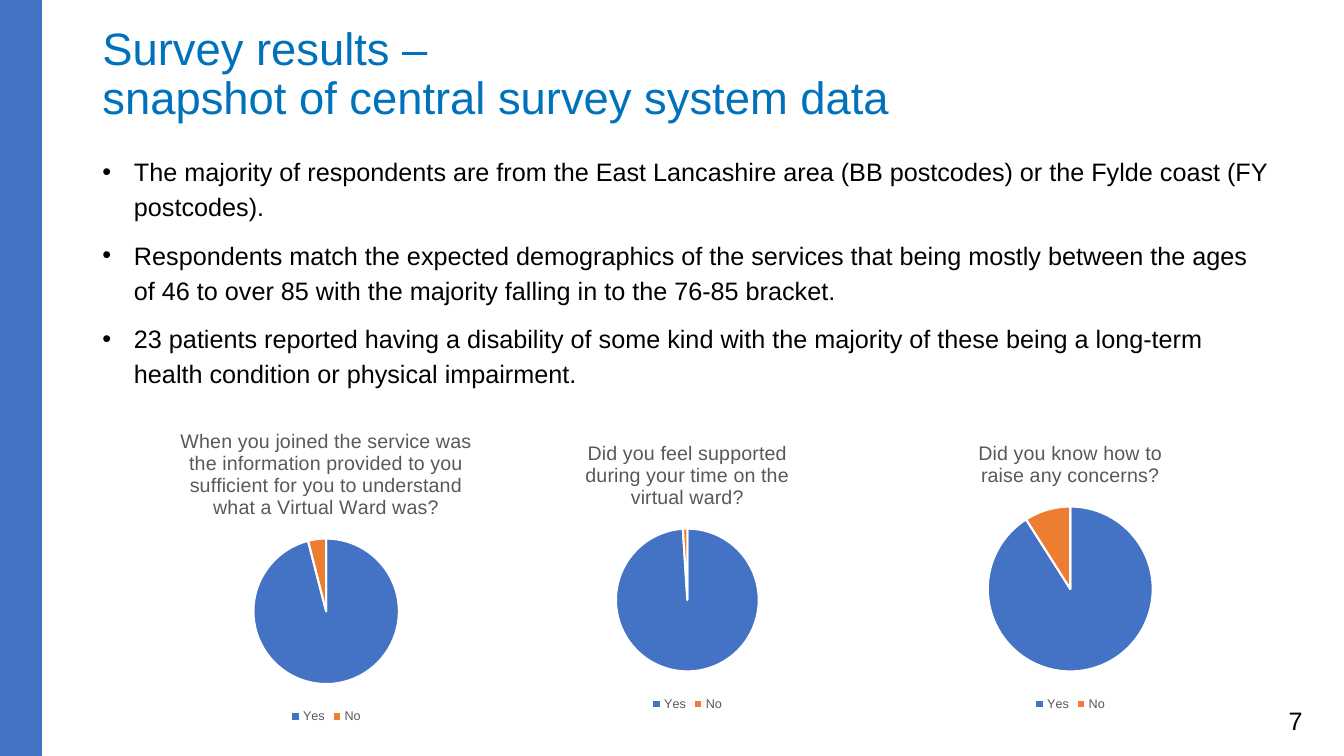
from lxml.etree import SubElement
from pptx import Presentation
from pptx.chart.data import CategoryChartData
from pptx.dml.color import RGBColor
from pptx.enum.chart import XL_CHART_TYPE, XL_LEGEND_POSITION
from pptx.enum.shapes import MSO_SHAPE
from pptx.enum.text import MSO_ANCHOR, MSO_AUTO_SIZE, PP_ALIGN
from pptx.oxml.ns import qn
from pptx.util import Pt

BLUE = RGBColor(0x44, 0x72, 0xC4)
ORANGE = RGBColor(0xED, 0x7D, 0x31)
TITLE = RGBColor(0x00, 0x72, 0xBC)
GRAY = RGBColor(0x59, 0x59, 0x59)
BLACK = RGBColor(0, 0, 0)
WHITE = RGBColor(0xFF, 0xFF, 0xFF)

HEAD = "Survey results –\vsnapshot of central survey system data"
POINTS = [
    "The majority of respondents are from the East Lancashire area "
    "(BB postcodes) or the Fylde coast (FY postcodes).",
    "Respondents match the expected demographics of the services that being "
    "mostly between the ages of 46 to over 85 with the majority falling in "
    "to the 76-85 bracket.",
    "23 patients reported having a disability of some kind with the majority "
    "of these being a long-term health condition or physical impairment.",
]
# Question, Yes and No percentages, box in points
PIES = [
    ("When you joined the service was the information provided to you "
     "sufficient for you to understand what a Virtual Ward was?",
     (96, 4), (91, 295, 284, 225)),
    ("Did you feel supported during your time on the virtual ward?",
     (99, 1), (383, 304, 216, 207)),
    ("Did you know how to raise any concerns?",
     (91, 9), (659, 304, 211, 207)),
]


def style(font, size, color):
    for key, value in {"name": "Arial", "size": Pt(size), "bold": False}.items():
        setattr(font, key, value)
    font.color.rgb = color


def place(shape, box):
    for key, value in zip(("left", "top", "width", "height"), box):
        setattr(shape, key, Pt(value))


def add_bar(slide, box):
    bar = slide.shapes.add_shape(MSO_SHAPE.RECTANGLE, *map(Pt, box))
    bar.shadow.inherit = False
    bar.fill.solid()
    bar.fill.fore_color.rgb = BLUE
    bar.line.fill.background()


def add_title(slide, box):
    title = slide.shapes.title
    place(title, box)
    frame = title.text_frame
    frame.text = HEAD
    frame.auto_size = MSO_AUTO_SIZE.NONE
    frame.vertical_anchor = MSO_ANCHOR.MIDDLE
    para = frame.paragraphs[0]
    para.alignment = PP_ALIGN.LEFT
    para.line_spacing = 0.9
    style(para.font, 32.4, TITLE)


def add_list(slide, box):
    body = slide.placeholders[1]
    place(body, box)
    frame = body.text_frame
    frame.text = "\n".join(POINTS)
    frame.auto_size = MSO_AUTO_SIZE.NONE
    for para in frame.paragraphs:
        props = para._p.get_or_add_pPr()
        props.set("marL", str(Pt(22.5)))
        props.set("indent", str(-Pt(22.5)))
        SubElement(props, qn("a:buFont"), typeface="Arial")
        SubElement(props, qn("a:buChar"), char="•")
        form = {"line_spacing": 1.15, "space_before": Pt(0), "space_after": Pt(10)}
        for key, value in form.items():
            setattr(para, key, value)
        style(para.font, 18, BLACK)


def add_pie(slide, box, ask, values):
    data = CategoryChartData()
    data.categories = ["Yes", "No"]
    data.add_series(ask, values)
    chart = slide.shapes.add_chart(XL_CHART_TYPE.PIE, *map(Pt, box), data).chart
    style(chart.font, 10, BLACK)

    # Question above the pie
    chart.has_title = True
    chart.chart_title.include_in_layout = False
    frame = chart.chart_title.text_frame
    frame.text = ask
    style(frame.paragraphs[0].runs[0].font, 14, GRAY)

    # Legend below the pie
    chart.has_legend = True
    chart.legend.position = XL_LEGEND_POSITION.BOTTOM
    chart.legend.include_in_layout = False
    style(chart.legend.font, 9, GRAY)

    # Slices
    plot = chart.plots[0]
    plot.vary_by_categories = True
    for idx, color in enumerate((BLUE, ORANGE)):
        look = plot.series[0].points[idx].format
        look.fill.solid()
        look.fill.fore_color.rgb = color
        look.line.color.rgb = WHITE
        look.line.width = Pt(1.5)


def add_number(slide, box):
    frame = slide.shapes.add_textbox(*map(Pt, box)).text_frame
    frame.word_wrap = True
    frame.text = "7"
    para = frame.paragraphs[0]
    para.alignment = PP_ALIGN.CENTER
    style(para.font, 18, BLACK)


def main():
    deck = Presentation()
    deck.slide_width, deck.slide_height = Pt(960), Pt(540)
    slide = deck.slides.add_slide(deck.slide_layouts[1])
    add_bar(slide, (0, 0, 30, 540))
    add_title(slide, (66, 29, 737, 49))
    add_list(slide, (66, 105, 850, 176))
    for ask, values, box in PIES:
        add_pie(slide, box, ask, values)
    add_number(slide, (906.5, 500.5, 38, 29))
    deck.save("out.pptx")


if __name__ == "__main__":
    main()
